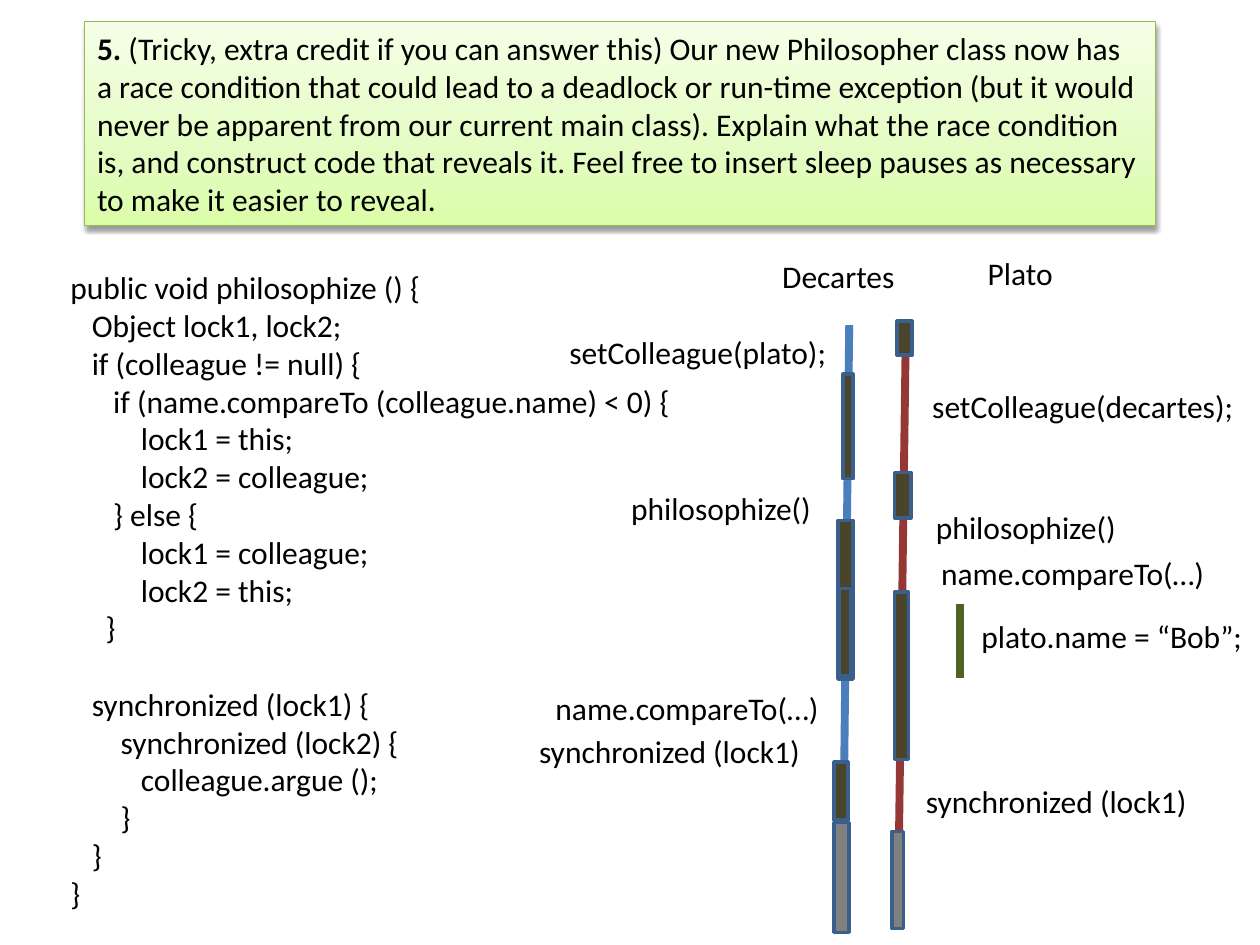
from dataclasses import dataclass
from lxml.etree import SubElement
from pptx import Presentation
from pptx.dml.color import RGBColor
from pptx.enum.shapes import MSO_CONNECTOR, MSO_SHAPE
from pptx.enum.text import MSO_AUTO_SIZE, PP_ALIGN
from pptx.oxml.ns import qn
from pptx.util import Emu, Pt


@dataclass
class Theme:
    """Colours, font and sizes of the slide."""
    font: str = "Calibri"
    size: int = 18
    ink: str = "000000"
    edge: str = "3A5F8C"
    busy: str = "4A452A"
    wait: str = "808080"
    blue: str = "4B7EBC"
    red: str = "953735"
    green: str = "4F6228"
    rim: str = "98B955"
    fade: tuple = ((0, "DAFDA7"), (35000, "E4FCC2"), (100000, "F5FFE7"))


def px(n):
    """Turn px, 100 to the inch, into EMU."""
    return Emu(n * 9144)


def rgb(code):
    """Turn a hex code into a colour."""
    return RGBColor.from_string(code)


class Painter:
    """Draws each kind of element on the current slide."""

    def __init__(self, slide, theme):
        """Keep the slide and the style."""
        self.slide, self.theme = slide, theme

    def type(self, frame):
        """Give all runs of a frame the theme font."""
        for para in frame.paragraphs:
            for run in para.runs:
                run.font.name = self.theme.font
                run.font.size = Pt(self.theme.size)
                run.font.color.rgb = rgb(self.theme.ink)

    def title(self, x, y, w, h, lead, text):
        """Turn the title into a shaded box with a bold lead."""
        box = self.slide.shapes.title
        box.left, box.top, box.width, box.height = map(px, (x, y, w, h))
        frame = box.text_frame
        frame.auto_size = MSO_AUTO_SIZE.SHAPE_TO_FIT_TEXT
        frame.text = lead
        para = frame.paragraphs[0]
        para.alignment = PP_ALIGN.LEFT
        para.add_run().text = text
        para.runs[0].font.bold = True
        self.type(frame)
        self.shade(box)

    def shade(self, box):
        """Add the gradient, rim and soft shadow."""
        props = box.element.spPr
        grad = SubElement(props, qn("a:gradFill"), rotWithShape="1")
        stops = SubElement(grad, qn("a:gsLst"))
        for pos, code in self.theme.fade:
            stop = SubElement(stops, qn("a:gs"), pos=str(pos))
            SubElement(stop, qn("a:srgbClr"), val=code)
        SubElement(grad, qn("a:lin"), ang="16200000", scaled="1")
        box.line.color.rgb = rgb(self.theme.rim)
        box.line.width = Pt(0.75)
        fx = SubElement(props, qn("a:effectLst"))
        cast = SubElement(fx, qn("a:outerShdw"), blurRad="40000",
                          dist="20000", dir="5400000", rotWithShape="0")
        tint = SubElement(cast, qn("a:srgbClr"), val=self.theme.ink)
        SubElement(tint, qn("a:alpha"), val="38000")

    def label(self, x, y, w, text):
        """Add a one-line label."""
        box = self.slide.shapes.add_textbox(*map(px, (x, y, w, 40)))
        box.text_frame.word_wrap = False
        box.text_frame.text = text
        self.type(box.text_frame)

    def code(self, x, y, w, h, rows):
        """Add code rows of (indent, gap in points, text)."""
        box = self.slide.shapes.add_textbox(*map(px, (x, y, w, h)))
        frame = box.text_frame
        frame.word_wrap = True
        frame.text = "\n".join(text for _, _, text in rows)
        for para, (dent, gap, _) in zip(frame.paragraphs, rows):
            para.space_before = Pt(gap)
            para._p.get_or_add_pPr().set("marL", str(px(dent)))
        self.type(frame)

    def line(self, x1, y1, x2, y2, code):
        """Add a thick straight line."""
        line = self.slide.shapes.add_connector(
            MSO_CONNECTOR.STRAIGHT, *map(px, (x1, y1, x2, y2)))
        line.line.color.rgb = rgb(code)
        line.line.width = Pt(4.5)
        SubElement(line.element.spPr, qn("a:effectLst"))

    def bar(self, x, y, w, h, code):
        """Add an activity bar."""
        bar = self.slide.shapes.add_shape(
            MSO_SHAPE.RECTANGLE, *map(px, (x, y, w, h)))
        bar.shadow.inherit = False
        bar.fill.solid()
        bar.fill.fore_color.rgb = rgb(code)
        bar.line.color.rgb = rgb(self.theme.edge)
        bar.line.width = Pt(2)


TASK = (
    " (Tricky, extra credit if you can answer this) Our new Philosopher class "
    "now has a race condition that could lead to a deadlock or run-time "
    "exception (but it would never be apparent from our current main class). "
    "Explain what the race condition is, and construct code that reveals it. "
    "Feel free to insert sleep pauses as necessary to make it easier to reveal.")

CODE = (
    (0, 0, "public void philosophize () {"),
    (17, 0, "Object lock1, lock2;"),
    (17, 0, "if (colleague != null) {"),
    (34, 0, "if (name.compareTo (colleague.name) < 0) {"),
    (56, 0, "lock1 = this;"),
    (56, 0, "lock2 = colleague;"),
    (34, 0, "} else {"),
    (56, 0, "lock1 = colleague;"),
    (56, 0, "lock2 = this;"),
    (28, 0, "}"),
    (17, 22, "synchronized (lock1) {"),
    (40, 0, "synchronized (lock2) {"),
    (56, 0, "colleague.argue ();"),
    (40, 0, "}"),
    (17, 0, "}"),
    (0, 0, "}"))

LABELS = (
    (611, 199, 110, "Decartes"),
    (774, 197, 72, "Plato"),
    (442, 259, 226, "setColleague(plato);"),
    (730, 302, 262, "setColleague(decartes);"),
    (491, 383, 165, "philosophize()"),
    (733, 398, 165, "philosophize()"),
    (737, 435, 231, "name.compareTo(…)"),
    (769, 485, 230, "plato.name = “Bob”;"),
    (431, 542, 231, "name.compareTo(…)"),
    (725, 616, 230, "synchronized (lock1)"),
    (418, 576, 230, "synchronized (lock1)"))

BUSY = (
    (669, 297, 8, 83), (665, 413, 12, 126), (666, 467, 9, 69),
    (662, 605, 11, 46), (712, 255, 12, 27), (710, 375, 13, 36),
    (710, 470, 11, 133))

WAIT = ((662, 653, 12, 87), (708, 660, 9, 77))


def main():
    """Build and save the slide."""
    deck = Presentation()
    deck.slide_width, deck.slide_height = px(1000), px(750)
    theme = Theme()
    pen = Painter(deck.slides.add_slide(deck.slide_layouts[5]), theme)
    pen.title(67, 17, 850, 162, "5.", TASK)
    pen.line(674, 258, 669, 700, theme.blue)
    pen.line(719, 258, 713, 700, theme.red)
    pen.line(762, 479, 762, 538, theme.green)
    pen.code(46, 208, 529, 525, CODE)
    for item in LABELS:
        pen.label(*item)
    for spots, tone in ((BUSY, theme.busy), (WAIT, theme.wait)):
        for spot in spots:
            pen.bar(*spot, tone)
    deck.save("out.pptx")


if __name__ == "__main__":
    main()
